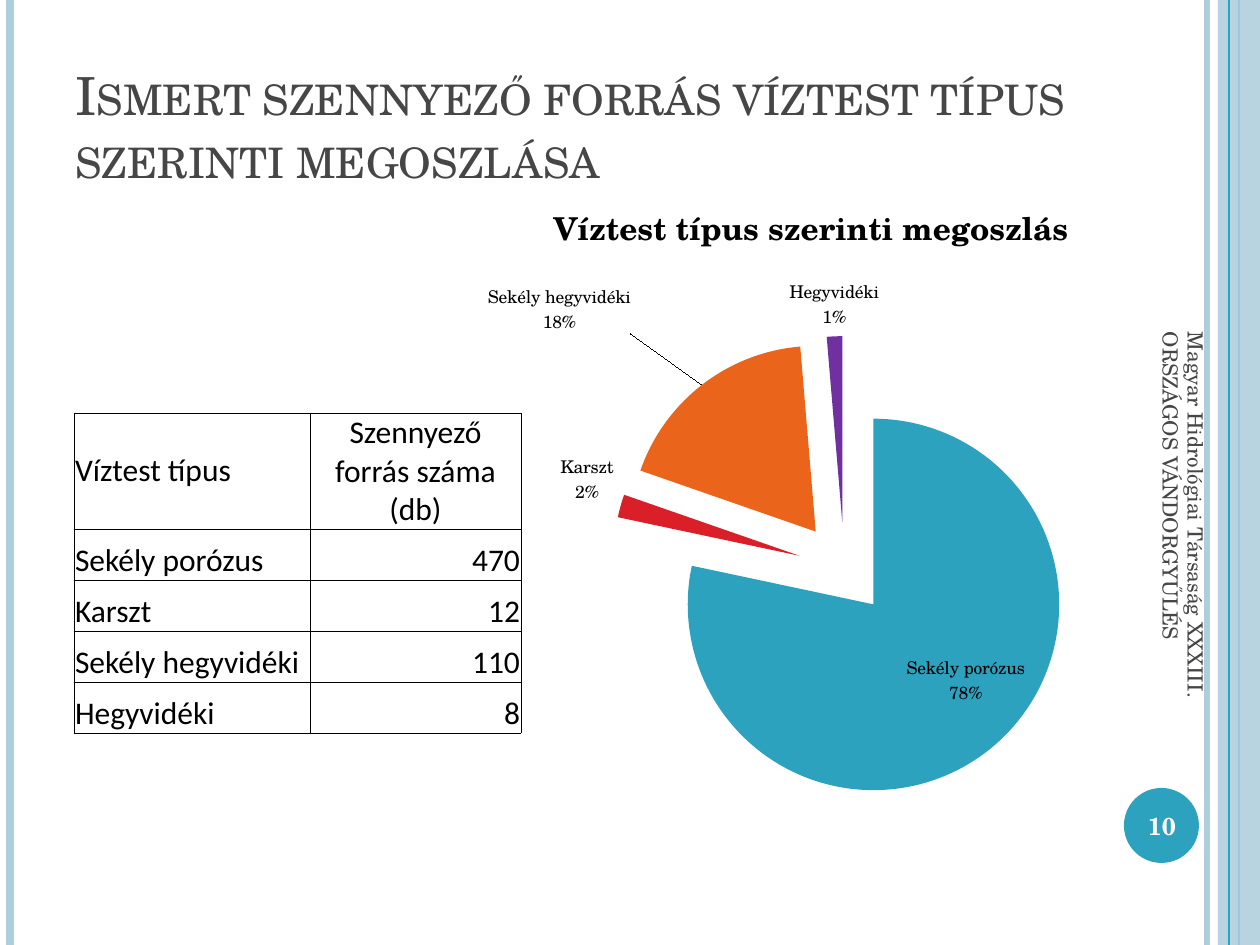
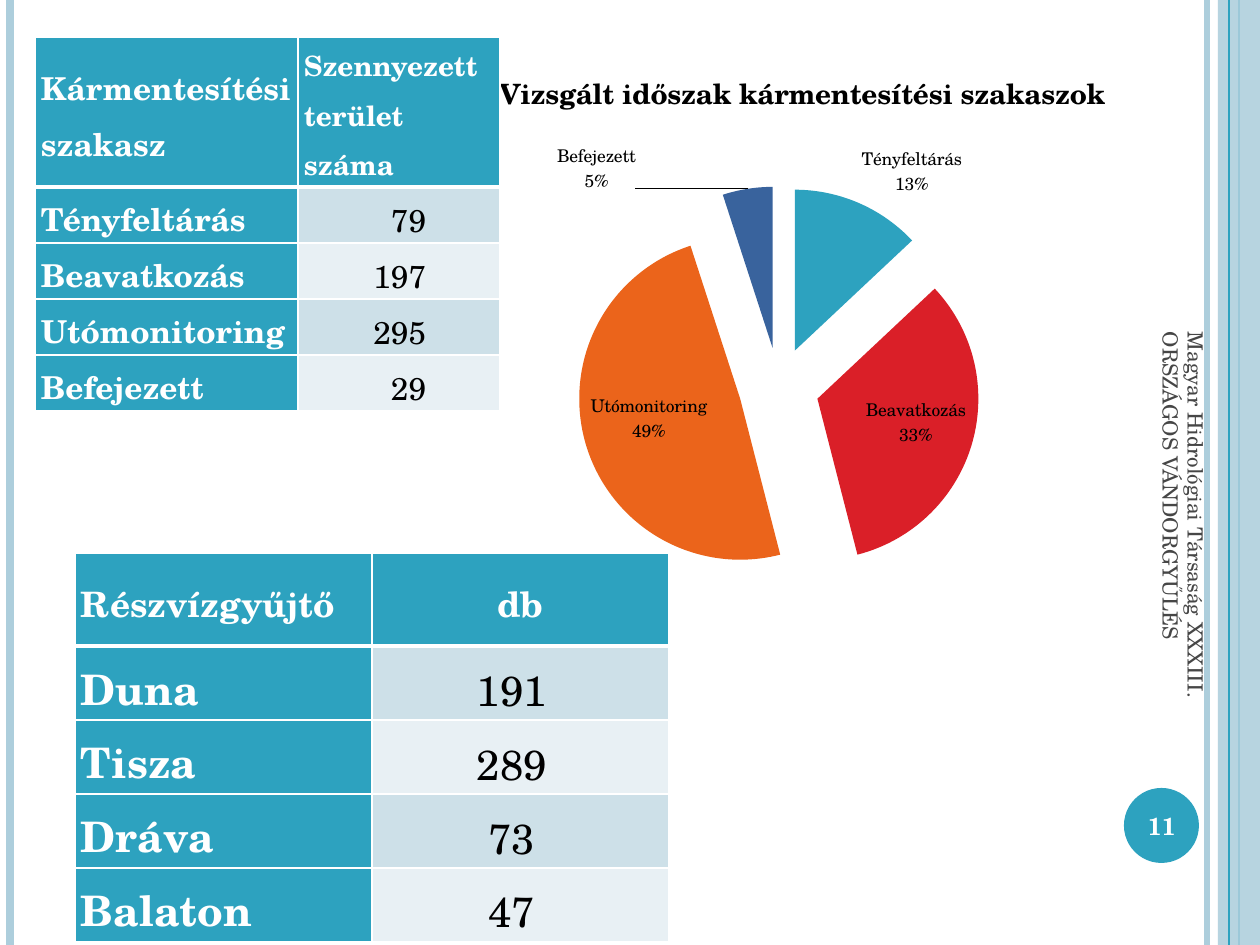
"""Build two slides on pollution sources by water body type and remediation stage."""
from lxml.etree import SubElement
from pptx import Presentation
from pptx.chart.data import CategoryChartData
from pptx.dml.color import RGBColor
from pptx.enum.chart import XL_CHART_TYPE, XL_LABEL_POSITION
from pptx.enum.shapes import MSO_CONNECTOR, MSO_SHAPE
from pptx.enum.text import MSO_ANCHOR, PP_ALIGN
from pptx.oxml import parse_xml
from pptx.oxml.ns import nsdecls, qn
from pptx.util import Pt

PX = 914400 // 126
SERIF, SANS = "TeX Gyre Schola", "Calibri"
TEAL, PALE, GREY, WHITE, BLACK = "2DA2BF", "ADCEDC", "464646", "FFFFFF", "000000"
RED, ORANGE, PURPLE, BLUE = "DA1F28", "EB641B", "7030A0", "39639D"
BANDS = "CDE0E8", "E8F0F4"
L, C, R = PP_ALIGN.LEFT, PP_ALIGN.CENTER, PP_ALIGN.RIGHT
rgb = RGBColor.from_string


def write(tf, text, size, color, bold=False, align=L, font=SERIF, anchor=MSO_ANCHOR.MIDDLE):
    tf.text = text
    tf.word_wrap = True
    tf.vertical_anchor = anchor
    p = tf.paragraphs[0]
    p.alignment = align
    f = p.runs[0].font
    f.name, f.size, f.bold, f.color.rgb = font, Pt(size), bold, rgb(color)
    return p


def add_table(s, x, y, widths, heights, rows, sizes, aligns, insets, banded):
    tbl = s.shapes.add_table(len(rows), len(widths), x * PX, y * PX,
                             sum(widths) * PX, sum(heights) * PX).table
    tbl.first_row = tbl.horz_banding = False
    for col, w in zip(tbl.columns, widths):
        col.width = w * PX
    for i, row in enumerate(rows):
        tbl.rows[i].height = heights[i] * PX
        for j, text in enumerate(row):
            cell = tbl.cell(i, j)
            head = banded and (i == 0 or j == 0)
            size = sizes[j] if i == 0 else sizes[2]
            p = write(cell.text_frame, text, size, WHITE if head else BLACK, head,
                      aligns[min(i, 1)][j], SERIF if banded else SANS)
            top_or_mid = i == 0 and (banded or j == 0)
            cell.vertical_anchor = MSO_ANCHOR.MIDDLE if top_or_mid else MSO_ANCHOR.BOTTOM
            cell.margin_left = insets[0] * PX
            cell.margin_right = insets[1 if i and j else 0] * PX
            cell.margin_top = cell.margin_bottom = 0
            if banded:
                p.line_spacing = 1.15
                cell.fill.solid()
                cell.fill.fore_color.rgb = rgb(TEAL if head else BANDS[(i - 1) % 2])
            else:
                cell.fill.background()
            tcPr = cell._tc.get_or_add_tcPr()
            for k, side in enumerate("LRTB"):
                thick = banded and (i, side) in ((0, "B"), (1, "T"))
                width = Pt(3 if thick else 1 if banded else 0.5)
                tcPr.insert(k, parse_xml(
                    f'<a:ln{side} {nsdecls("a")} w="{width}"><a:solidFill><a:srgbClr '
                    f'val="{WHITE if banded else BLACK}"/></a:solidFill></a:ln{side}>'))


prs = Presentation()
prs.slide_width, prs.slide_height = 1260 * PX, 945 * PX

type_rows = [("Víztest típus", "Szennyező forrás száma (db)"), ("Sekély porózus", "470"),
             ("Karszt", "12"), ("Sekély hegyvidéki", "110"), ("Hegyvidéki", "8")]
stage_rows = [("Kármentesítési szakasz", "Szennyezett terület száma"), ("Tényfeltárás", "79"),
              ("Beavatkozás", "197"), ("Utómonitoring", "295"), ("Befejezett", "29")]
basin_rows = [("Részvízgyűjtő", "db"), ("Duna", "191"), ("Tisza", "289"),
              ("Dráva", "73"), ("Balaton", "47")]

pies = [
    ("10", "Víztest típus szerinti megoszlás", 18, (441, 175, 740, 645), type_rows,
     (470, 12, 110, 8), (TEAL, RED, ORANGE, PURPLE), (0.23, 0.25, 0.63, 0.72), 2, (-0.09, -0.07)),
    ("11", "Vizsgált időszak kármentesítési szakaszok ", 16, (412, 45, 789, 576), stage_rows,
     (13, 33, 49, 5), (TEAL, RED, ORANGE, BLUE), (0.21, 0.19, 0.51, 0.81), 3, (-0.14, 0.02)),
]
for number, title, size, box, rows, values, colors, plot, moved, shift in pies:
    s = prs.slides.add_slide(prs.slide_layouts[6])

    for x, color, width in ((1207, PALE, 3), (10, PALE, 4.5), (1239, TEAL, 1.5),
                            (None, PALE, 0), (1229, TEAL, 0.75)):
        if x is None:
            sp = s.shapes.add_shape(MSO_SHAPE.RECTANGLE, 1218 * PX, 0, 42 * PX, 945 * PX)
            sp.shadow.inherit = False
            sp.fill.solid()
            sp.fill.fore_color.rgb = rgb(color)
            sp.line.fill.background()
            clr = sp._element.spPr.find(qn("a:solidFill"))[0]
            SubElement(clr, qn("a:alpha")).set("val", "87000")
            continue
        ln = s.shapes.add_connector(MSO_CONNECTOR.STRAIGHT, x * PX, 0, x * PX, 945 * PX)
        ln.line.color.rgb = rgb(color)
        ln.line.width = Pt(width)
        SubElement(ln._element.spPr, qn("a:effectLst"))

    sp = s.shapes.add_shape(MSO_SHAPE.OVAL, 1124 * PX, 788 * PX, 75 * PX, 75 * PX)
    sp.shadow.inherit = False
    sp.fill.solid()
    sp.fill.fore_color.rgb = rgb(TEAL)
    sp.line.fill.background()
    tb = s.shapes.add_textbox(1120 * PX, 790 * PX, 84 * PX, 72 * PX)
    write(tb.text_frame, number, 14, WHITE, True, C)
    tb = s.shapes.add_textbox(963 * PX, 515 * PX, 441 * PX, 50 * PX)
    tb.rotation = 90
    write(tb.text_frame, "Magyar Hidrológiai Társaság XXXIII. ORSZÁGOS VÁNDORGYŰLÉS", 12, GREY)

    data = CategoryChartData()
    data.categories = [row[0] for row in rows[1:]]
    data.add_series("Series 1", values)
    chart = s.shapes.add_chart(XL_CHART_TYPE.PIE, *(v * PX for v in box), data).chart
    chart.has_legend = False
    chart.font.name, chart.font.size = SERIF, Pt(10)
    chart.font.color.rgb = rgb(BLACK)
    write(chart.chart_title.text_frame, title, size, BLACK, True, C)
    area = chart._chartSpace.chart.plotArea
    for old in area.findall(qn("c:layout")):
        area.remove(old)
    x, y, w, h = plot
    area.insert(0, parse_xml(
        f'<c:layout {nsdecls("c")}><c:manualLayout><c:layoutTarget val="inner"/>'
        f'<c:xMode val="edge"/><c:yMode val="edge"/><c:x val="{x}"/><c:y val="{y}"/>'
        f'<c:w val="{w}"/><c:h val="{h}"/></c:manualLayout></c:layout>'))

    pie = chart.plots[0]
    pie.vary_by_categories = True
    ser = pie.series[0]
    for i, color in enumerate(colors):
        fill = ser.points[i].format.fill
        fill.solid()
        fill.fore_color.rgb = rgb(color)
    ser._element.find(qn("c:dPt")).addprevious(
        parse_xml(f'<c:explosion {nsdecls("c")} val="25"/>'))
    for dpt in ser._element.findall(qn("c:dPt")):
        dpt.find(qn("c:spPr")).addprevious(
            parse_xml(f'<c:explosion {nsdecls("c")} val="25"/>'))
    labels = ser.data_labels
    labels.show_category_name = labels.show_percentage = True
    labels.show_value = False
    labels.position = XL_LABEL_POSITION.BEST_FIT
    dx, dy = shift
    labels._element.insert(0, parse_xml(
        f'<c:dLbl {nsdecls("c")}><c:idx val="{moved}"/><c:layout><c:manualLayout>'
        f'<c:x val="{dx}"/><c:y val="{dy}"/></c:manualLayout></c:layout>'
        '<c:dLblPos val="bestFit"/><c:showLegendKey val="0"/><c:showVal val="0"/>'
        '<c:showCatName val="1"/><c:showSerName val="0"/><c:showPercent val="1"/>'
        '<c:showBubbleSize val="0"/></c:dLbl>'))

s1, s2 = prs.slides
tb = s1.shapes.add_textbox(63 * PX, 38 * PX, 1029 * PX, 157 * PX)
p = write(tb.text_frame, "Ismert szennyező forrás víztest típus szerinti megoszlása", 30, GREY,
          anchor=MSO_ANCHOR.BOTTOM)
p.runs[0]._r.get_or_add_rPr().set("cap", "small")

add_table(s1, 74, 413, (236, 211), [116] + [51] * 4, type_rows, (18, 18, 18),
          ((L, C), (L, R)), (1, 1), False)
add_table(s2, 35, 37, (263, 202), [150] + [56] * 4, stage_rows, (18, 16, 18),
          ((L, L), (L, R)), (6, 74), True)
add_table(s2, 75, 553, (297, 297), [93] + [74] * 4, basin_rows, (20, 20, 24),
          ((L, C), (L, C)), (6, 23), True)

prs.save("out.pptx")
